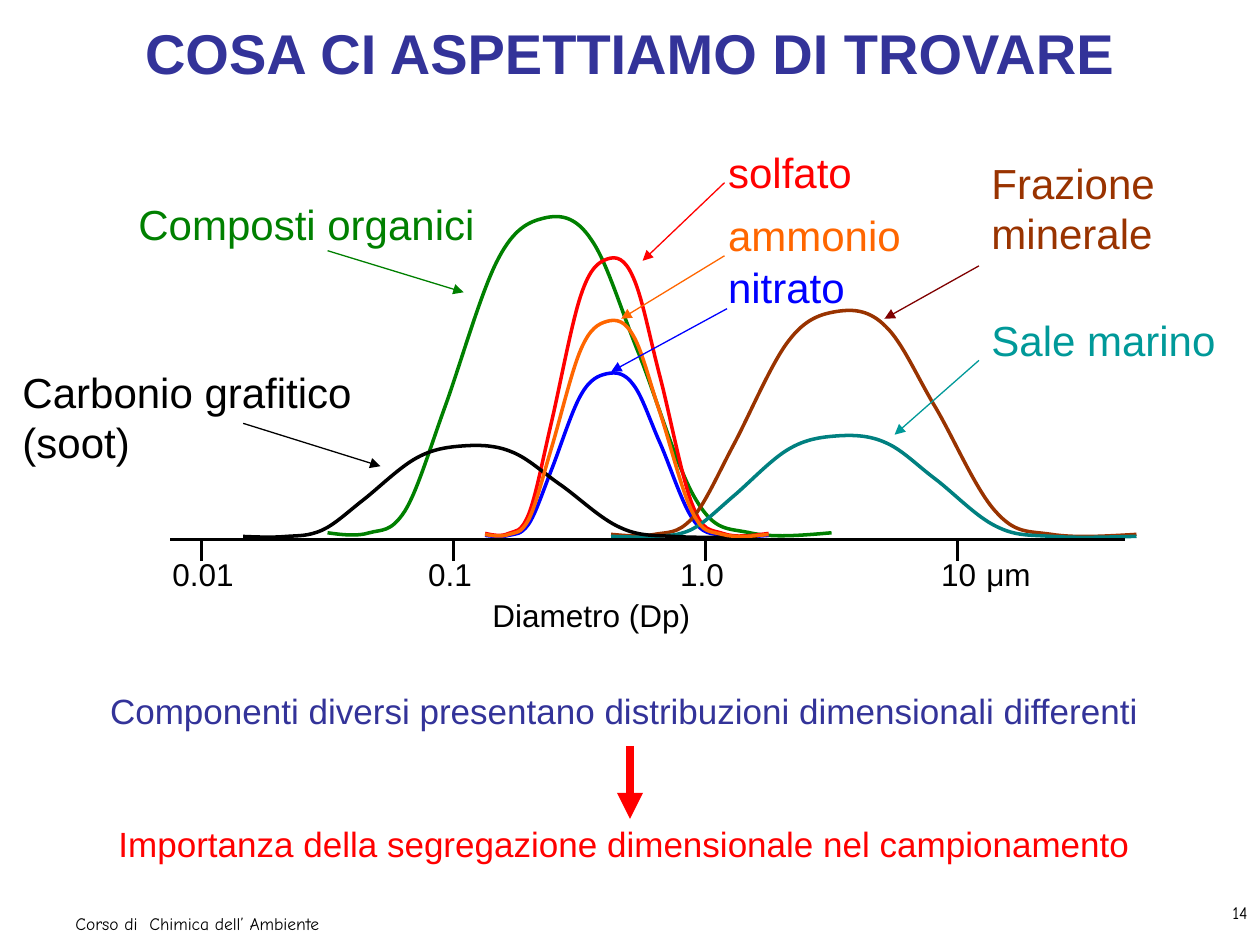
from dataclasses import dataclass

from lxml.etree import SubElement
from pptx import Presentation
from pptx.dml.color import RGBColor
from pptx.enum.shapes import MSO_CONNECTOR
from pptx.enum.text import MSO_ANCHOR, PP_ALIGN
from pptx.oxml.ns import qn
from pptx.util import Inches, Pt


@dataclass(frozen=True)
class Theme:
    black: str = "000000"
    indigo: str = "333399"
    red: str = "FF0000"
    green: str = "008000"
    blue: str = "0000FF"
    orange: str = "FF6600"
    brown: str = "993300"
    maroon: str = "800000"
    teal: str = "008080"
    aqua: str = "009999"
    font: str = "Arial"
    footer_font: str = "Comic Neue"
    title: int = 32
    label: int = 24
    statement: int = 20
    scale: int = 18
    footer: int = 10
    curve: float = 2
    pointer: float = 0.75
    big_arrow: float = 5


THEME = Theme()


@dataclass(frozen=True)
class Box:
    left: float
    top: float
    width: float
    height: float

    def inner(self, left, top, width, height):
        return Box(self.left + left, self.top + top, width, height)


# Shared outline of every size distribution, in percent of width and of depth
# below the peak: a start point, then cubic segments of three points each
OUTLINE = [
    (0, 98.4),
    (2.8, 99), (5.8, 99.6), (8.3, 98.4),
    (10.8, 97.3), (12.5, 98.4), (15.3, 91.8),
    (17.8, 85.6), (20.3, 72.4), (23.3, 59.5),
    (26.3, 46.7), (30.5, 23.7), (33.8, 14),
    (37, 4.3), (40, 2.3), (43, 1.2),
    (46.3, 0), (49.3, 0.8), (52.3, 7.8),
    (55.5, 14.8), (58.3, 30), (61.8, 43.2),
    (65.3, 56.8), (69.5, 79.4), (73.3, 88.7),
    (77, 98.1), (79.3, 96.9), (83.8, 98.4),
    (88.3, 100), (94, 99.2), (100, 98.4),
]


def add_text(page, box, text, size, color, wrap=True, align=PP_ALIGN.LEFT,
             bold=False, font=THEME.font):
    shape = page.shapes.add_textbox(*map(Inches, (box.left, box.top, box.width, box.height)))
    frame = shape.text_frame
    frame.word_wrap = wrap
    frame.vertical_anchor = MSO_ANCHOR.TOP
    para = frame.paragraphs[0]
    para.alignment = align
    span = para.add_run()
    span.text = text
    for name, value in {"size": Pt(size), "name": font, "bold": bold}.items():
        setattr(span.font, name, value)
    span.font.color.rgb = RGBColor.from_string(color)


def add_line(page, area, start, end, color, weight, arrow=False):
    ends = (area.left + start[0], area.top + start[1],
            area.left + end[0], area.top + end[1])
    line = page.shapes.add_connector(MSO_CONNECTOR.STRAIGHT, *map(Inches, ends))
    line.line.color.rgb = RGBColor.from_string(color)
    line.line.width = Pt(weight)
    if arrow:
        SubElement(line.line._get_or_add_ln(), qn("a:tailEnd"), type="triangle")
    SubElement(line._element.spPr, qn("a:effectLst"))


def bend(curve):
    """Turn each three straight steps of the outline into one cubic segment."""
    steps = list(curve._element.iter(qn("a:lnTo")))
    outline = steps[0].getparent()
    for first in range(0, len(steps), 3):
        cubic = SubElement(outline, qn("a:cubicBezTo"))
        for step in steps[first:first + 3]:
            cubic.append(step[0])
            outline.remove(step)


def add_curve(page, box, color):
    points = [(Inches(box.left + box.width * x / 100),
               Inches(box.top + box.height * y / 100)) for x, y in OUTLINE]
    builder = page.shapes.build_freeform(*points[0], scale=1.0)
    builder.add_line_segments(points[1:], close=False)
    curve = builder.convert_to_shape()
    bend(curve)
    curve.shadow.inherit = False
    curve.fill.background()
    curve.line.color.rgb = RGBColor.from_string(color)
    curve.line.width = Pt(THEME.curve)


def add_ticks(page, area):
    for decade in range(4):
        x = 0.25 + 2 * decade
        add_line(page, area, (x, 0), (x, 0.17), THEME.black, THEME.curve)
    for text, left, width in [("0.01", -0.08, 0.69), ("0.1", 1.95, 0.55),
                              ("1.0", 3.95, 0.55), ("10", 6.02, 0.48),
                              ("μm", 6.38, 0.55)]:
        add_text(page, area.inner(left, 0.08, width, 0.4), text,
                 THEME.scale, THEME.black, wrap=False)


def add_curves(page, area):
    # left, width, height, colour; all stand on the bottom of the area
    for left, width, height, color in [
        (1.25, 4, 2.57, THEME.green),
        (2.5, 2.25, 2.24, THEME.red),
        (2.5, 2.25, 1.32, THEME.blue),
        (3.5, 4.17, 1.82, THEME.brown),
        (3.5, 4.17, 0.82, THEME.teal),
        (0.58, 4.08, 0.74, THEME.black),
        (2.5, 2.25, 1.74, THEME.orange),
    ]:
        add_curve(page, area.inner(left, area.height - height, width, height), color)


def add_labels(page, area):
    # text, box, wraps, colour, arrow start, arrow end, arrow colour
    t = THEME
    for text, place, wrap, color, start, end, arrow_color in [
        ("Carbonio grafitico (soot)", (0.08, 1.86, 2.92, 0.9), True, t.black,
         (1.93, 2.36), (3.02, 2.7), t.black),
        ("Composti organici", (1, 0.53, 2.87, 0.5), False, t.green,
         (2.6, 0.99), (3.68, 1.32), t.green),
        ("solfato", (5.68, 0.11, 1.18, 0.5), False, t.red,
         (5.75, 0.45), (5.1, 1.07), t.red),
        ("ammonio", (5.68, 0.61, 1.57, 0.5), False, t.orange,
         (5.75, 1.03), (4.93, 1.53), t.orange),
        ("nitrato", (5.68, 1.03, 1.13, 0.5), False, t.blue,
         (5.77, 1.45), (4.85, 1.95), t.blue),
        ("Frazione minerale", (7.77, 0.2, 2.15, 0.9), True, t.brown,
         (7.77, 1.11), (7.02, 1.53), t.maroon),
        ("Sale marino", (7.77, 1.45, 1.98, 0.5), False, t.aqua,
         (7.77, 1.86), (7.1, 2.45), t.aqua),
    ]:
        add_text(page, area.inner(*place), text, t.label, color, wrap)
        add_line(page, area, start, end, arrow_color, t.pointer, arrow=True)
    add_text(page, area.inner(3.81, 3.68, 1.77, 0.4), "Diametro (Dp)",
             t.scale, t.black, wrap=False)


def add_conclusion(page, area):
    for text, top, color in [
        ("Componenti diversi presentano distribuzioni dimensionali differenti",
         0, THEME.indigo),
        ("Importanza della segregazione dimensionale nel campionamento",
         1.06, THEME.red),
    ]:
        add_text(page, area.inner(0, top, area.width, 0.43), text,
                 THEME.statement, color, align=PP_ALIGN.CENTER)
    add_line(page, area, (4.42, 0.5), (4.42, 1.08), THEME.red, THEME.big_arrow, arrow=True)


def add_footer(page, area):
    for text, place, align in [
        ("14", (9, 0, 0.5, 0.34), PP_ALIGN.RIGHT),
        ("Corso di  Chimica dell’ Ambiente", (0, 0.09, 4.18, 0.34), PP_ALIGN.LEFT),
    ]:
        add_text(page, area.inner(*place), text, THEME.footer, THEME.black,
                 align=align, font=THEME.footer_font)


def main():
    deck = Presentation()
    deck.slide_width, deck.slide_height = Inches(10), Inches(7.5)
    page = deck.slides.add_slide(deck.slide_layouts[6])

    # Size distribution diagram
    axis = Box(1.35, 4.28, 7.58, 0.8)
    add_ticks(page, axis)
    add_curves(page, Box(1.35, 1.7, 7.67, 2.57))
    add_line(page, axis, (0, 0), (axis.width, 0), THEME.black, THEME.curve)
    add_labels(page, Box(0, 1, 10, 4.08))

    # Title, conclusion and footer
    add_text(page, Box(0, 0.1, 10, 0.63), "COSA CI ASPETTIAMO DI TROVARE",
             THEME.title, THEME.indigo, align=PP_ALIGN.CENTER, bold=True)
    add_conclusion(page, Box(0.58, 5.42, 8.75, 1.49))
    add_footer(page, Box(0.5, 7.11, 9.5, 0.43))
    deck.save("out.pptx")


if __name__ == "__main__":
    main()
